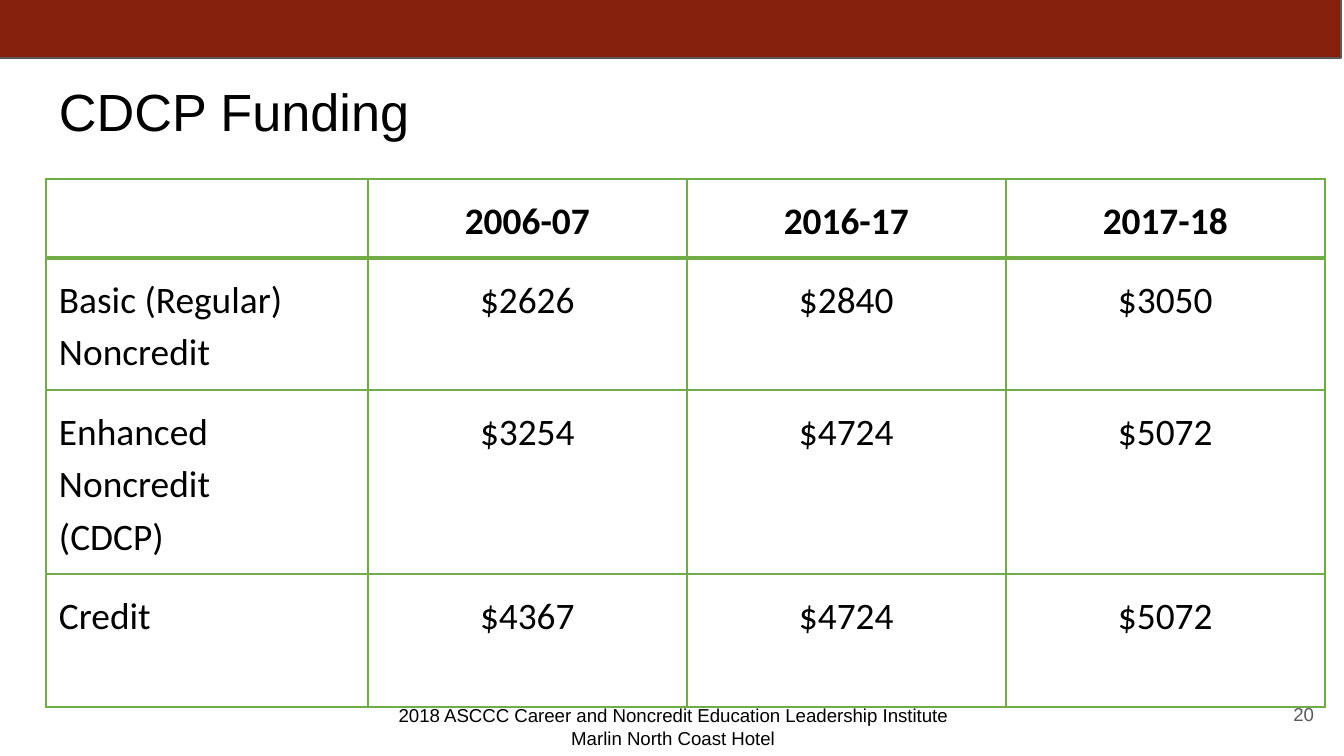
from lxml import etree
from pptx import Presentation
from pptx.dml.color import RGBColor
from pptx.enum.shapes import MSO_SHAPE as SHAPE
from pptx.enum.text import MSO_ANCHOR as ANCHOR, PP_ALIGN as ALIGN
from pptx.oxml.ns import qn
from pptx.util import Emu, Pt

GREEN = "70AD47"
BLACK = "000000"
INSET = 13
COLUMNS = [322, 319, 319, 319]
ROWS = [
    (79, ["", "2006-07", "2016-17", "2017-18"]),
    (132, ["Basic (Regular)\nNoncredit", "$2626", "$2840", "$3050"]),
    (184, ["Enhanced Noncredit\n(CDCP)", "$3254", "$4724", "$5072"]),
    (133, ["Credit", "$4367", "$4724", "$5072"]),
]


def px(n):
    return Emu(round(n * 914400 / 134.4))


def rgb(value):
    return RGBColor.from_string(value)


def write(tf, text, size=10, font="Arial", color=BLACK, bold=False,
          align=ALIGN.LEFT, spacing=None):
    tf.word_wrap = True
    tf.text = text
    for p in tf.paragraphs:
        p.alignment = align
        p.line_spacing = spacing
        for r in p.runs:
            r.font.size = Pt(size)
            r.font.name = font
            r.font.bold = bold
            r.font.color.rgb = rgb(color)


def set_insets(box):
    box.margin_left = box.margin_right = px(INSET)
    box.margin_top = box.margin_bottom = px(INSET)


def add_text(s, x, y, w, h, text, anchor=ANCHOR.TOP, **fmt):
    tf = s.shapes.add_textbox(px(x), px(y), px(w), px(h)).text_frame
    set_insets(tf)
    tf.vertical_anchor = anchor
    write(tf, text, **fmt)


def add_band(s, x, y, w, h, fill, line):
    sp = s.shapes.add_shape(SHAPE.RECTANGLE, px(x), px(y), px(w), px(h))
    sp.shadow.inherit = False
    sp.fill.solid()
    sp.fill.fore_color.rgb = rgb(fill)
    sp.line.color.rgb = rgb(line)
    sp.line.width = Pt(0.75)


def set_border(cell, side, width):
    tc_pr = cell._tc.get_or_add_tcPr()
    ln = etree.SubElement(tc_pr, qn(f"a:ln{side}"), w=str(Pt(width)))
    fill = etree.SubElement(ln, qn("a:solidFill"))
    etree.SubElement(fill, qn("a:srgbClr"), val=GREEN)


def add_funding_table(s, x, y):
    heights = [height for height, _ in ROWS]
    table = s.shapes.add_table(len(ROWS), len(COLUMNS), px(x), px(y),
                               px(sum(COLUMNS)), px(sum(heights))).table
    table.first_row = table.horz_banding = False
    for column, width in zip(table.columns, COLUMNS):
        column.width = px(width)
    for i, (height, texts) in enumerate(ROWS):
        table.rows[i].height = px(height)
        for j, text in enumerate(texts):
            cell = table.cell(i, j)
            set_insets(cell)
            write(cell.text_frame, text, size=20, font="Calibri", bold=i == 0,
                  align=ALIGN.CENTER if j else ALIGN.LEFT, spacing=1.15)
            widths = {"L": 1, "R": 1, "T": 2 if i == 1 else 1, "B": 2 if i == 0 else 1}
            for side, width in widths.items():
                set_border(cell, side, width)
            cell.fill.background()


def main():
    prs = Presentation()
    prs.slide_width, prs.slide_height = px(1344), px(756)
    s = prs.slides.add_slide(prs.slide_layouts[6])
    add_band(s, -3, -8, 1344, 66, "85200C", "595959")
    add_text(s, 46, 66, 1253, 85, "CDCP Funding", size=28)
    add_text(s, 1246, 685, 81, 58, "20", anchor=ANCHOR.MIDDLE,
             color="595959", align=ALIGN.RIGHT)
    add_text(s, 1, 691, 1344, 65,
             "2018 ASCCC Career and Noncredit Education Leadership Institute\v"
             "Marlin North Coast Hotel", align=ALIGN.CENTER)
    add_funding_table(s, 46, 179)
    prs.save("out.pptx")


if __name__ == "__main__":
    main()
